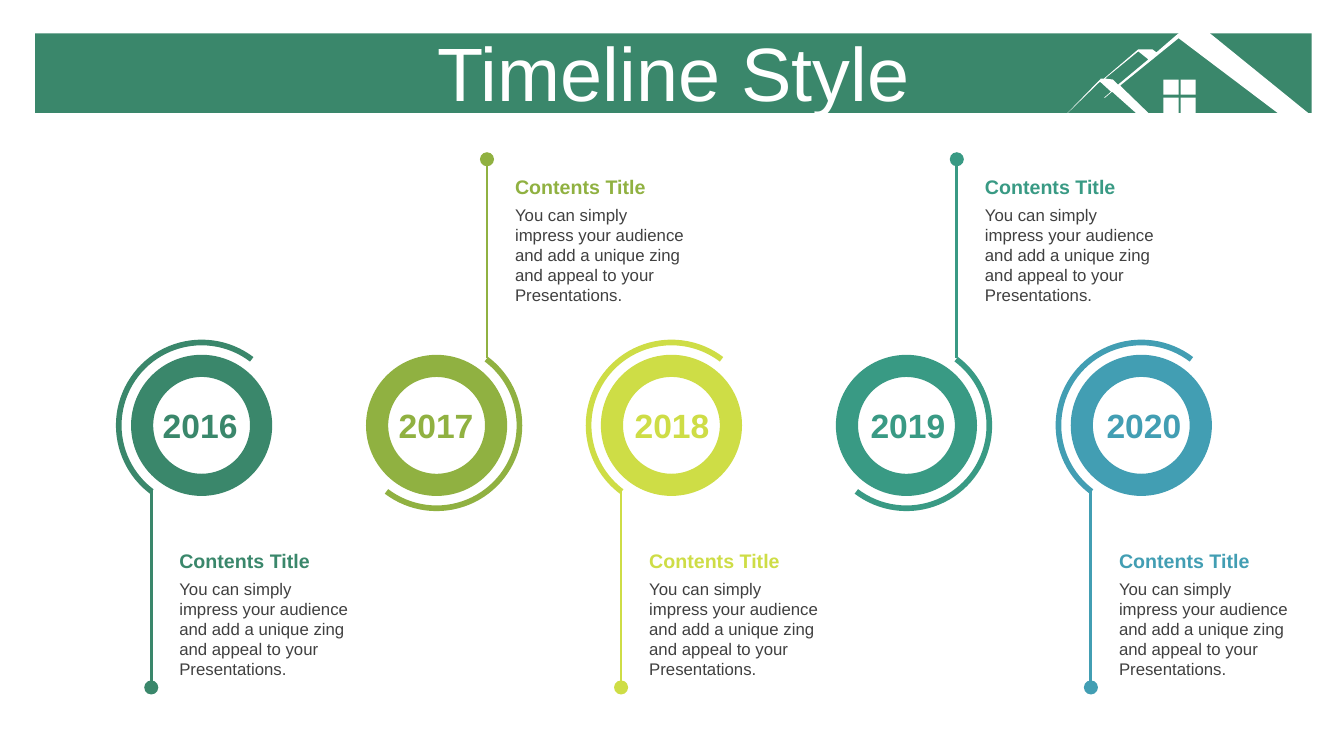
from lxml.etree import SubElement
from pptx import Presentation
from pptx.dml.color import RGBColor
from pptx.enum.shapes import MSO_CONNECTOR, MSO_SHAPE
from pptx.enum.text import MSO_ANCHOR, MSO_AUTO_SIZE, PP_ALIGN
from pptx.oxml.ns import qn
from pptx.util import Inches, Pt

THEME = {
    "font": "Arial",
    "banner": "3A876B",
    "white": "FFFFFF",
    "body": "404040",
    "steps": ["3A876B", "90B141", "CEDD46", "399A84", "429EB3"],
    "size": {"title": 54, "year": 24, "head": 14, "body": 12},
}
SIZE = THEME["size"]
BODY = ("You can simply impress your audience and add a unique zing "
        "and appeal to your Presentations.")

deck = Presentation()
deck.slide_width, deck.slide_height = Inches(13.33), Inches(7.5)
slide = deck.slides.add_slide(deck.slide_layouts[6])
shapes = slide.shapes


def paint(shape, color):
    shape.shadow.inherit = False
    shape.fill.solid()
    shape.fill.fore_color.rgb = RGBColor.from_string(color)
    shape.line.fill.background()


def write(text, box, size, color, bold=False, align=PP_ALIGN.LEFT):
    frame = shapes.add_textbox(*map(Inches, box)).text_frame
    frame.word_wrap = True
    frame.auto_size = MSO_AUTO_SIZE.SHAPE_TO_FIT_TEXT
    para = frame.paragraphs[0]
    para.alignment = align
    run = para.add_run()
    run.text = text
    style = {"name": THEME["font"], "size": Pt(size), "bold": bold}
    for key, value in style.items():
        setattr(run.font, key, value)
    run.font.color.rgb = RGBColor.from_string(color)
    return frame


# Banner
banner = shapes.add_shape(MSO_SHAPE.RECTANGLE, *map(Inches, (0.35, 0.33, 12.66, 0.79)))
paint(banner, THEME["banner"])

# House: roof, gable and four window panes, in hundredths of an inch
roof = [(1169, 33), (1200, 33), (1301, 115), (1271, 115), (1169, 38),
        (1111, 85), (1143, 116), (1131, 116), (1103, 91), (1096, 97),
        (1095, 97), (1102, 91), (1091, 81), (1055, 116), (1056, 115),
        (1092, 78), (1095, 78), (1129, 49), (1143, 49), (1147, 52)]
gable = [(1129, 51), (1096, 78), (1104, 79), (1109, 84), (1139, 59)]
panes = [[(x, y), (x + 15, y), (x + 15, y + 15), (x, y + 15)]
         for y in (79, 97) for x in (1154, 1171)]
house = shapes.build_freeform(*roof[0], scale=Inches(0.01))
house.add_line_segments(roof[1:])
for part in [gable, *panes]:
    house.move_to(*part[0])
    house.add_line_segments(part[1:])
paint(house.convert_to_shape(), THEME["white"])

# Title
title = write("Timeline Style", (0.35, 0.37, 12.66, 0.79), SIZE["title"],
              THEME["white"], align=PP_ALIGN.CENTER)
title.auto_size = MSO_AUTO_SIZE.NONE
title.vertical_anchor = MSO_ANCHOR.MIDDLE
title.paragraphs[0].line_spacing = 0.9
title.paragraphs[0].space_before = Pt(10)

# Timeline steps: odd ones point up, even ones point down
for i, color in enumerate(THEME["steps"]):
    up = i % 2 == 1
    left = 1.3 + 2.33 * i

    # Ring and outer arc
    for kind, x, y, side, adjust in (
            (MSO_SHAPE.DONUT, left, 3.52, 1.4, [0.157]),
            (MSO_SHAPE.BLOCK_ARC, left - 0.15, 3.37, 1.7, [76.13, 184.318, 0.033])):
        ring = shapes.add_shape(kind, *map(Inches, (x, y, side, side)))
        for n, value in enumerate(adjust):
            ring.adjustments[n] = value
        ring.rotation = 180 if up else 0
        paint(ring, color)

    # Year
    write(str(2016 + i), (1.33 + 2.34 * i, 3.97, 1.31, 0.5), SIZE["year"],
          color, True, PP_ALIGN.CENTER)

    # Stem with a round tip
    stem = left + (1.2 if up else 0.2)
    base, tip = (3.55, 1.58) if up else (4.85, 6.82)
    line = shapes.add_connector(MSO_CONNECTOR.STRAIGHT,
                                *map(Inches, (stem, base, stem, tip)))
    line.line.width = Pt(2)
    line.line.color.rgb = RGBColor.from_string(color)
    SubElement(line.line._get_or_add_ln(), qn("a:tailEnd"), type="oval", w="lg", len="lg")
    SubElement(line._element.spPr, qn("a:effectLst"))

    # Heading and body
    top = 1.69 if up else 5.4
    write(BODY, (stem + 0.18, top + 0.29, 1.92, 1.11), SIZE["body"], THEME["body"])
    write("Contents Title", (stem + 0.18, top, 1.92, 0.34), SIZE["head"], color, True)

deck.save("out.pptx")
